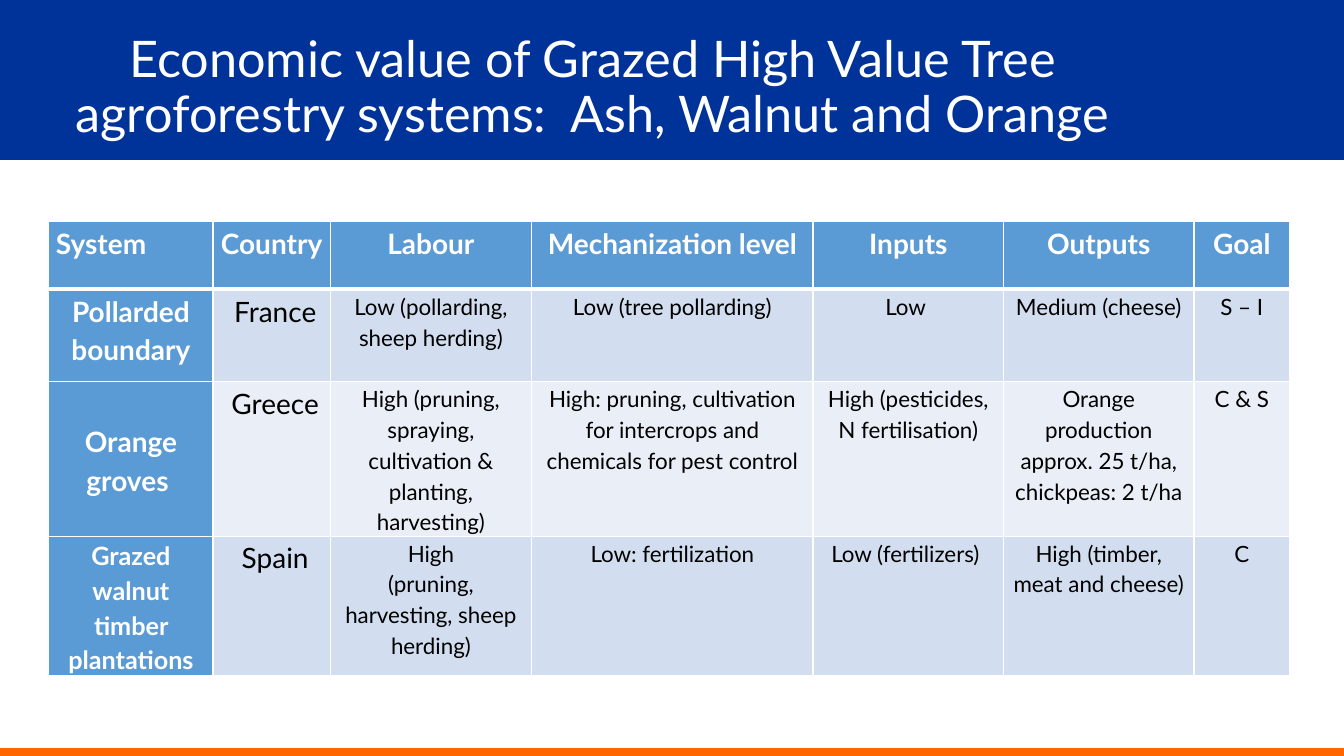
from lxml.etree import SubElement
from pptx import Presentation
from pptx.dml.color import RGBColor
from pptx.enum.shapes import MSO_SHAPE
from pptx.enum.text import MSO_ANCHOR, PP_ALIGN
from pptx.oxml.ns import qn
from pptx.util import Cm, Pt

FONT = "Lato"
COLORS = {
    "white": "FFFFFF",
    "black": "000000",
    "banner": "003399",
    "footer": "FF6600",
    "heading": "5B9BD5",
    "band_dark": "D2DEEF",
    "band_light": "EAEFF7",
}
SLIDE_WIDTH, SLIDE_HEIGHT = 33.87, 19.05
BANNER_HEIGHT, FOOTER_HEIGHT = 4.03, 0.2

TITLE = "Economic value of Grazed High Value Tree agroforestry systems:  Ash, Walnut and Orange"
COLUMN_WIDTHS = [4.14, 2.95, 5.08, 7.09, 4.8, 4.8, 2.41]
ROW_HEIGHTS = [1.7, 2.33, 3.4, 3.44]
SYSTEMS = [
    ["System", "Country", "Labour", "Mechanization level", "Inputs", "Outputs", "Goal"],
    ["Pollarded boundary", " France", "Low (pollarding, sheep herding)",
     "Low (tree pollarding)", "Low ", "Medium (cheese)", "S – I"],
    ["Orange groves ", " Greece",
     "High (pruning, spraying, cultivation & planting, harvesting)",
     "High: pruning, cultivation for intercrops and chemicals for pest control",
     "High (pesticides, N fertilisation)",
     "Orange production approx. 25 t/ha, chickpeas: 2 t/ha", "C & S"],
    ["Grazed walnut timber plantations", " Spain",
     "High\n(pruning, harvesting, sheep herding)",
     "Low: fertilization", "Low (fertilizers) ",
     "High (timber, meat and cheese)", "C"],
]
ORANGE_ROW, WALNUT_ROW = 2, 3


def rgb(name):
    return RGBColor.from_string(COLORS[name])


def style_text(text_frame, size, color, bold=False, align=PP_ALIGN.CENTER, spacing=1.15):
    for paragraph in text_frame.paragraphs:
        paragraph.alignment = align
        paragraph.line_spacing = spacing
        for run in paragraph.runs:
            run.font.name = FONT
            run.font.size = Pt(size)
            run.font.bold = bold
            run.font.color.rgb = rgb(color)


def add_bar(slide, left, top, width, height, color):
    bar = slide.shapes.add_shape(
        MSO_SHAPE.RECTANGLE, Cm(left), Cm(top), Cm(width), Cm(height))
    bar.shadow.inherit = False
    bar.fill.solid()
    bar.fill.fore_color.rgb = rgb(color)
    bar.line.fill.background()


def add_banner(slide, left, top, width, height):
    add_bar(slide, left, top, width, height, "banner")
    title = slide.shapes.add_textbox(
        Cm(left + 0.48), Cm(top + 0.99), Cm(width - 4.96), Cm(2.49)).text_frame
    title.word_wrap = True
    title.vertical_anchor = MSO_ANCHOR.MIDDLE
    title.text = TITLE
    style_text(title, 36, "white", spacing=0.9)


def set_borders(cell, widths):
    """Draw white cell borders; widths maps side letters to points."""
    properties = cell._tc.get_or_add_tcPr()
    for side, width in widths.items():
        border = SubElement(properties, qn(f"a:ln{side}"), w=str(Pt(width)))
        fill = SubElement(border, qn("a:solidFill"))
        SubElement(fill, qn("a:srgbClr"), val=COLORS["white"])


def format_cell(cell, row, column):
    is_heading = row == 0 or column == 0
    cell.margin_left = cell.margin_right = Cm(0.18)
    cell.margin_top = cell.margin_bottom = 0
    set_borders(cell, {"L": 1, "R": 1,
                       "T": 3 if row == 1 else 1,
                       "B": 3 if row == 0 else 1})
    band = "band_dark" if row % 2 else "band_light"
    cell.fill.solid()
    cell.fill.fore_color.rgb = rgb("heading" if is_heading else band)

    if (row, column) == (WALNUT_ROW, 0):
        size = 18
    else:
        size = 20 if is_heading or column == 1 else 16
    centred = (row, column) == (ORANGE_ROW, 0)
    cell.vertical_anchor = MSO_ANCHOR.MIDDLE if centred else MSO_ANCHOR.TOP
    align = PP_ALIGN.LEFT if row == column == 0 else PP_ALIGN.CENTER
    style_text(cell.text_frame, size, "white" if is_heading else "black",
               bold=is_heading, align=align)


def add_systems_table(slide, left, top):
    table = slide.shapes.add_table(
        len(ROW_HEIGHTS), len(COLUMN_WIDTHS), Cm(left), Cm(top),
        Cm(sum(COLUMN_WIDTHS)), Cm(sum(ROW_HEIGHTS))).table
    table.horz_banding = False
    for column, width in zip(table.columns, COLUMN_WIDTHS):
        column.width = Cm(width)
    for row, height in zip(table.rows, ROW_HEIGHTS):
        row.height = Cm(height)
    for row, entries in enumerate(SYSTEMS):
        for column, entry in enumerate(entries):
            cell = table.cell(row, column)
            cell.text_frame.text = entry
            format_cell(cell, row, column)


def main():
    presentation = Presentation()
    presentation.slide_width = Cm(SLIDE_WIDTH)
    presentation.slide_height = Cm(SLIDE_HEIGHT)
    slide = presentation.slides.add_slide(presentation.slide_layouts[6])
    add_banner(slide, 0, 0, SLIDE_WIDTH, BANNER_HEIGHT)
    add_bar(slide, 0, SLIDE_HEIGHT - FOOTER_HEIGHT, SLIDE_WIDTH, FOOTER_HEIGHT, "footer")
    add_systems_table(slide, 1.23, 5.59)
    presentation.save("out.pptx")


if __name__ == "__main__":
    main()
